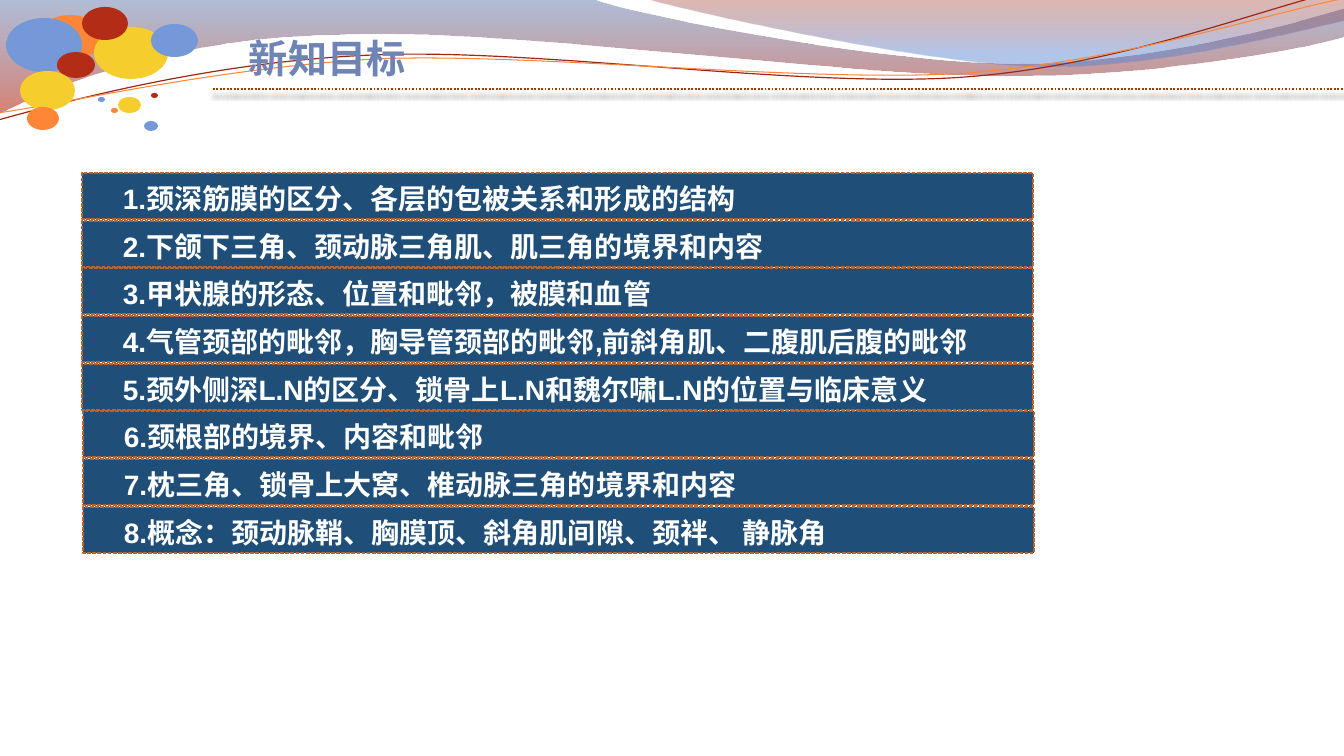
import pptx
import pptx.util
import pptx.dml.color
import pptx.enum.dml
import pptx.enum.shapes
import pptx.enum.text
import pptx.oxml
import pptx.oxml.ns

PX = 914400 / 100.8
RGB = pptx.dml.color.RGBColor
DASH = pptx.enum.dml.MSO_LINE
SHAPE = pptx.enum.shapes.MSO_SHAPE
PT = pptx.util.Pt
qn = pptx.oxml.ns.qn
A_NS = pptx.oxml.ns.nsdecls("a")

NAVY = RGB(0x1F, 0x4E, 0x79)
RUST = RGB(0xBC, 0x63, 0x29)
BROWN = RGB(0x9A, 0x3D, 0x01)
WHITE = RGB(0xFF, 0xFF, 0xFF)
TITLE_BLUE = RGB(0x6E, 0x84, 0xB4)
BAND_BLUE = RGB(0x4F, 0x6E, 0xA8)
BAND_RED = RGB(0xB6, 0x1A, 0x00)
VEIL_RED = RGB(0x95, 0x15, 0x00)
VEIL_BLUE = RGB(0x56, 0x81, 0xD1)
WAVE_RED = RGB(0x9E, 0x27, 0x13)
ORANGE = RGB(0xFE, 0x86, 0x37)
BLUE = RGB(0x75, 0x98, 0xD9)
RED = RGB(0xB3, 0x2C, 0x16)
YELLOW = RGB(0xF5, 0xCD, 0x2D)

deck = pptx.Presentation()
deck.slide_width, deck.slide_height = round(1344 * PX), round(756 * PX)
slide = deck.slides.add_slide(deck.slide_layouts[6])


def draw_curve(start, segments, close):
    """Outline of lines (x, y) and Bezier curves (x1, y1, x2, y2, x, y), in px."""
    anchors = [(round(p[-2] * PX), round(p[-1] * PX)) for p in [start, *segments]]
    builder = slide.shapes.build_freeform(*anchors[0])
    builder.add_line_segments(anchors[1:], close=close)
    outline = builder.convert_to_shape()
    outline.shadow.inherit = False
    straights = list(outline._element.spPr.iter(qn("a:lnTo")))
    for straight, segment in zip(straights, segments):
        if len(segment) == 6:
            points = "".join(
                f'<a:pt x="{round(x * PX) - outline.left}" y="{round(y * PX) - outline.top}"/>'
                for x, y in zip(segment[::2], segment[1::2]))
            straight.getparent().replace(straight, pptx.oxml.parse_xml(
                f'<a:cubicBezTo {A_NS}>{points}</a:cubicBezTo>'))
    return outline


def add_text(text, left, top, width, height, size, font, color):
    box = slide.shapes.add_textbox(*(round(n * PX) for n in (left, top, width, height)))
    frame = box.text_frame
    frame.word_wrap = True
    frame.auto_size = pptx.enum.text.MSO_AUTO_SIZE.SHAPE_TO_FIT_TEXT
    frame.text = text
    run = frame.paragraphs[0].runs[0]
    run.font.size, run.font.bold, run.font.name = PT(size), True, font
    run.font.color.rgb = color
    run.font._element.append(pptx.oxml.parse_xml(
        f'<a:ea {A_NS} typeface="Noto Sans CJK SC"/>'))


# Header bands: start, segments, gradient stops as (position, colour, opacity)
bands = [
    ((0, 0), [(592, -1), (639, 17, 892, 64, 1019, 64), (1147, 64, 1288, 26, 1344, 9),
              (1346, 37), (1322, 45, 1169, 77, 1002, 76), (836, 76, 513, 29, 346, 35),
              (173, 37, 61, 84, -1, 114)],
     [(0, BAND_BLUE, 45), (1, BAND_RED, 55)]),
    ((644, -1), [(684, 11, 916, 62, 1033, 66), (1150, 70, 1292, 32, 1344, 21), (1344, 0)],
     [(0, VEIL_RED, 30), (0.8, VEIL_BLUE, 45)]),
]
for start, segments, stops in bands:
    band = draw_curve(start, segments, True)
    band.line.fill.background()
    band.fill.gradient()
    band.fill.gradient_angle = 270
    for stop, (position, color, opacity) in zip(band.fill.gradient_stops, stops):
        stop.position = position
        stop.color.rgb = color
    for tint, (_, _, opacity) in zip(band._element.spPr.iter(qn("a:srgbClr")), stops):
        tint.append(pptx.oxml.parse_xml(f'<a:alpha {A_NS} val="{opacity * 1000}"/>'))

# Thin wave lines, tilted slightly upwards to the right
waves = [
    ((-3, 88), [(64, 73, 213, 40, 372, 41), (532, 41, 794, 94, 957, 91),
                (1118, 88, 1264, 36, 1344, 22)], WAVE_RED, 0.85),
    ((-2, 81), [(63, 75, 220, 46, 381, 45), (541, 47, 801, 89, 962, 87),
                (1123, 83, 1266, 42, 1347, 30)], ORANGE, 0.75),
]
for start, segments, color, weight in waves:
    wave = draw_curve(start, segments, False)
    wave.rotation = 357.3
    wave.fill.background()
    wave.line.color.rgb = color
    wave.line.width = PT(weight)

# Dotted rule with its shadow
rule = slide.shapes.add_connector(
    pptx.enum.shapes.MSO_CONNECTOR.STRAIGHT,
    *(round(n * PX) for n in (213, 89, 1344, 89)))
rule.line.color.rgb = BROWN
rule.line.width = PT(1.25)
rule.line.dash_style = DASH.ROUND_DOT
rule._element.spPr.append(pptx.oxml.parse_xml(
    f'<a:effectLst {A_NS}><a:outerShdw blurRad="50800" dist="50800" dir="5400000">'
    '<a:srgbClr val="000000"><a:alpha val="99000"/></a:srgbClr>'
    '</a:outerShdw></a:effectLst>'))

# Title
add_text("新知目标", 239, 29, 306, 57, 28, "Noto Sans CJK SC", TITLE_BLUE)

# Balloons
balloons = [
    (38, 15, 64, 45, ORANGE), (6, 18, 76, 54, BLUE), (57, 52, 38, 26, RED),
    (20, 71, 55, 39, YELLOW), (94, 27, 74, 52, YELLOW), (82, 7, 46, 33, RED),
    (27, 107, 32, 23, ORANGE), (118, 97, 23, 16, YELLOW), (111, 108, 7, 5, ORANGE),
    (98, 97, 7, 5, BLUE), (151, 93, 7, 5, RED), (144, 121, 14, 10, BLUE),
    (151, 24, 47, 33, BLUE),
]
for *place, color in balloons:
    balloon = slide.shapes.add_shape(SHAPE.OVAL, *(round(n * PX) for n in place))
    balloon.shadow.inherit = False
    balloon.fill.solid()
    balloon.fill.fore_color.rgb = color
    balloon.line.fill.background()

# Goals, one bar each; the last three sit one px further right
goals = [
    "1.颈深筋膜的区分、各层的包被关系和形成的结构",
    "2.下颌下三角、颈动脉三角肌、肌三角的境界和内容",
    "3.甲状腺的形态、位置和毗邻，被膜和血管",
    "4.气管颈部的毗邻，胸导管颈部的毗邻,前斜角肌、二腹肌后腹的毗邻",
    "5.颈外侧深L.N的区分、锁骨上L.N和魏尔啸L.N的位置与临床意义",
    "6.颈根部的境界、内容和毗邻",
    "7.枕三角、锁骨上大窝、椎动脉三角的境界和内容",
    "8.概念：颈动脉鞘、胸膜顶、斜角肌间隙、颈袢、 静脉角",
]
for index, goal in enumerate(goals):
    left = 82 if index < 5 else 83
    top = 173 + round(index * 143 / 3)
    bar = slide.shapes.add_shape(SHAPE.RECTANGLE,
                                 *(round(n * PX) for n in (left, top, 951, 46)))
    bar.shadow.inherit = False
    bar.fill.solid()
    bar.fill.fore_color.rgb = NAVY
    bar.line.color.rgb = RUST
    bar.line.width = PT(0.9)
    bar.line.dash_style = DASH.SQUARE_DOT
    bar.line._ln.find(qn("a:prstDash")).set("val", "sysDash")
    add_text(goal, left + 31, top + 4, 908, 44, 20, "Arial", WHITE)

deck.save("out.pptx")
